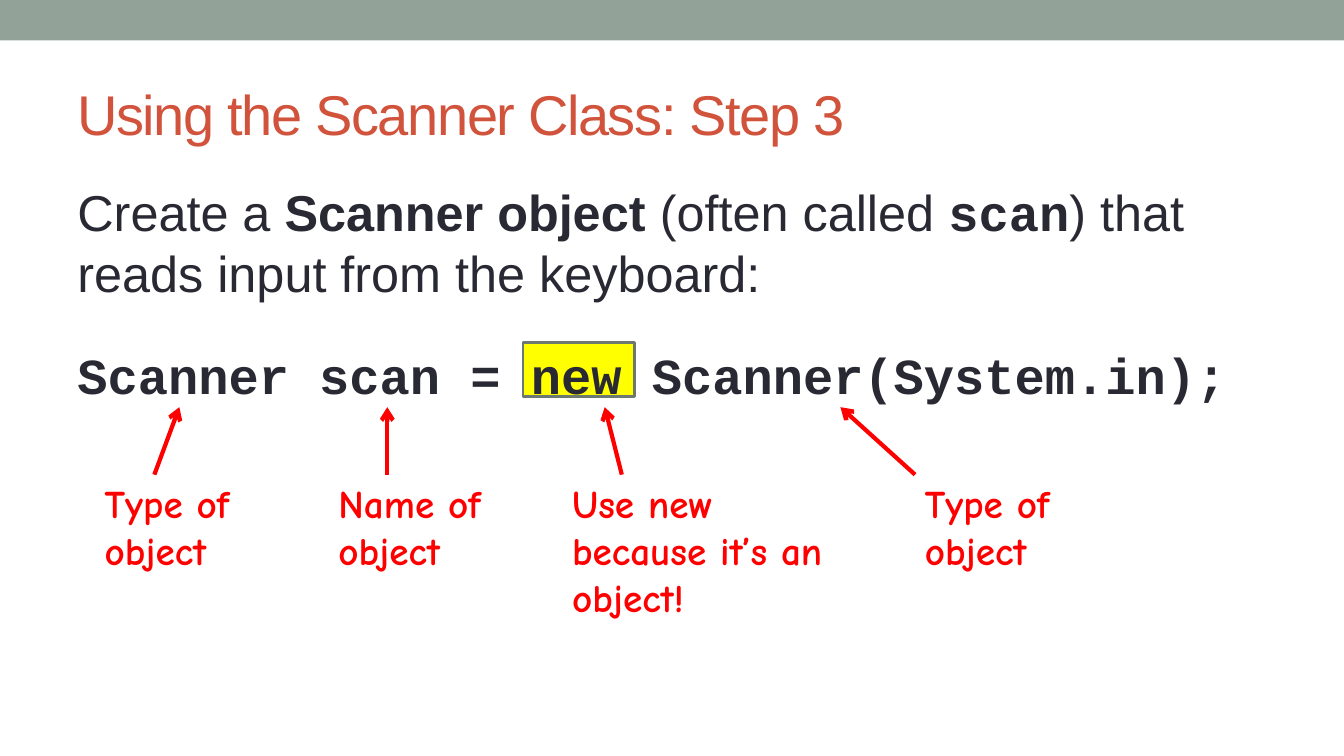
import pptx
import pptx.dml.color
import pptx.enum.shapes
import pptx.enum.text
import pptx.oxml
import pptx.oxml.ns
import pptx.util
from pptx.util import Cm

INK, RED = "292934", "FF0000"


def rgb(value):
    """Turn a hex string into a colour."""
    return pptx.dml.color.RGBColor.from_string(value)


def add_text(s, box, paragraphs, size=36, color=INK, font="Arial", bold=False,
             anchor="TOP", before=(), spacing=None):
    """Add a text box; each paragraph is a list of (text, format) runs."""
    tf = s.shapes.add_textbox(*map(Cm, box)).text_frame
    tf.word_wrap = True
    tf.vertical_anchor = getattr(pptx.enum.text.MSO_ANCHOR, anchor)
    for i, runs in enumerate(paragraphs):
        p = tf.add_paragraph() if i else tf.paragraphs[0]
        if before:
            p.space_before = pptx.util.Pt(before[i])
        for text, style in runs:
            r = p.add_run()
            r.text = text
            r.font.size = pptx.util.Pt(size)
            r.font.name = style.get("font", font)
            r.font.bold = style.get("bold", bold)
            r.font.color.rgb = rgb(color)
            if spacing is not None:
                r.font._element.set("spc", str(spacing))


def add_rect(s, box, fill, line=None):
    """Add a flat rectangle with an optional outline."""
    sp = s.shapes.add_shape(pptx.enum.shapes.MSO_SHAPE.RECTANGLE, *map(Cm, box))
    sp.shadow.inherit = False
    sp.fill.solid()
    sp.fill.fore_color.rgb = rgb(fill)
    if line:
        sp.line.color.rgb = rgb(line)
        sp.line.width = pptx.util.Pt(2.08)
    else:
        sp.line.fill.background()


def add_arrow(s, x1, y1, x2, y2):
    """Add a red arrow pointing at the second point."""
    c = s.shapes.add_connector(pptx.enum.shapes.MSO_CONNECTOR.STRAIGHT,
                               *map(Cm, (x1, y1, x2, y2)))
    c.line.color.rgb = rgb(RED)
    c.line.width = pptx.util.Pt(3)
    tail = pptx.oxml.parse_xml(
        f'<a:tailEnd {pptx.oxml.ns.nsdecls("a")} type="arrow"/>')
    c.line._get_or_add_ln().append(tail)
    c._element.spPr.append(pptx.oxml.parse_xml(
        f'<a:effectLst {pptx.oxml.ns.nsdecls("a")}/>'))


def add_header(s, width):
    """Draw the top band and the title below it."""
    add_rect(s, (0, 0, width, 1.02), "93A299")
    add_text(s, (1.7, 1.47, 30.48, 2.74),
             [[("Using the Scanner Class: Step 3", {})]],
             size=40, color="D2533C", anchor="MIDDLE", spacing=-100)


def add_statement(s, left, top):
    """Draw the explanation, the code line and its highlighted keyword."""
    code = {"font": "Courier New", "bold": True}
    add_rect(s, (left + 11.48, top + 4.19, 2.82, 1.35), "FFFF00", "6D7871")
    add_text(s, (left, top, 31.37, 9.37), [
        [("Create a ", {}), ("Scanner object ", {"bold": True}),
         ("(often called ", {}), ("scan", code),
         (") that reads input from the keyboard:", {})],
        [("Scanner scan = new Scanner(System.in);", code)],
    ], before=(4, 30))


def add_callout(s, box, text, start, tip):
    """Draw a red note and an arrow from its top edge to the code above."""
    left, top = box[:2]
    add_text(s, box, [[(text, {})]], size=28, color=RED, font="Comic Neue",
             bold=True)
    add_arrow(s, left + start, top, left + tip, top - 1.7)


def main():
    """Build the slide and save it."""
    prs = pptx.Presentation()
    prs.slide_width, prs.slide_height = Cm(33.87), Cm(19.05)
    s = prs.slides.add_slide(prs.slide_layouts[6])
    add_header(s, 33.87)
    add_statement(s, 1.7, 4.45)
    for left, width, height, text, start, tip in (
        (2.39, 5.44, 2.64, "Type of object", 1.5, 2.13),
        (8.28, 4.98, 2.64, "Name of object", 1.48, 1.48),
        (14.17, 7.14, 3.84, "Use new because it’s an object!", 1.5, 1.07),
        (23.06, 4.98, 2.64, "Type of object", 0, -1.88),
    ):
        add_callout(s, (left, 11.96, width, height), text, start, tip)
    prs.save("out.pptx")


if __name__ == "__main__":
    main()
